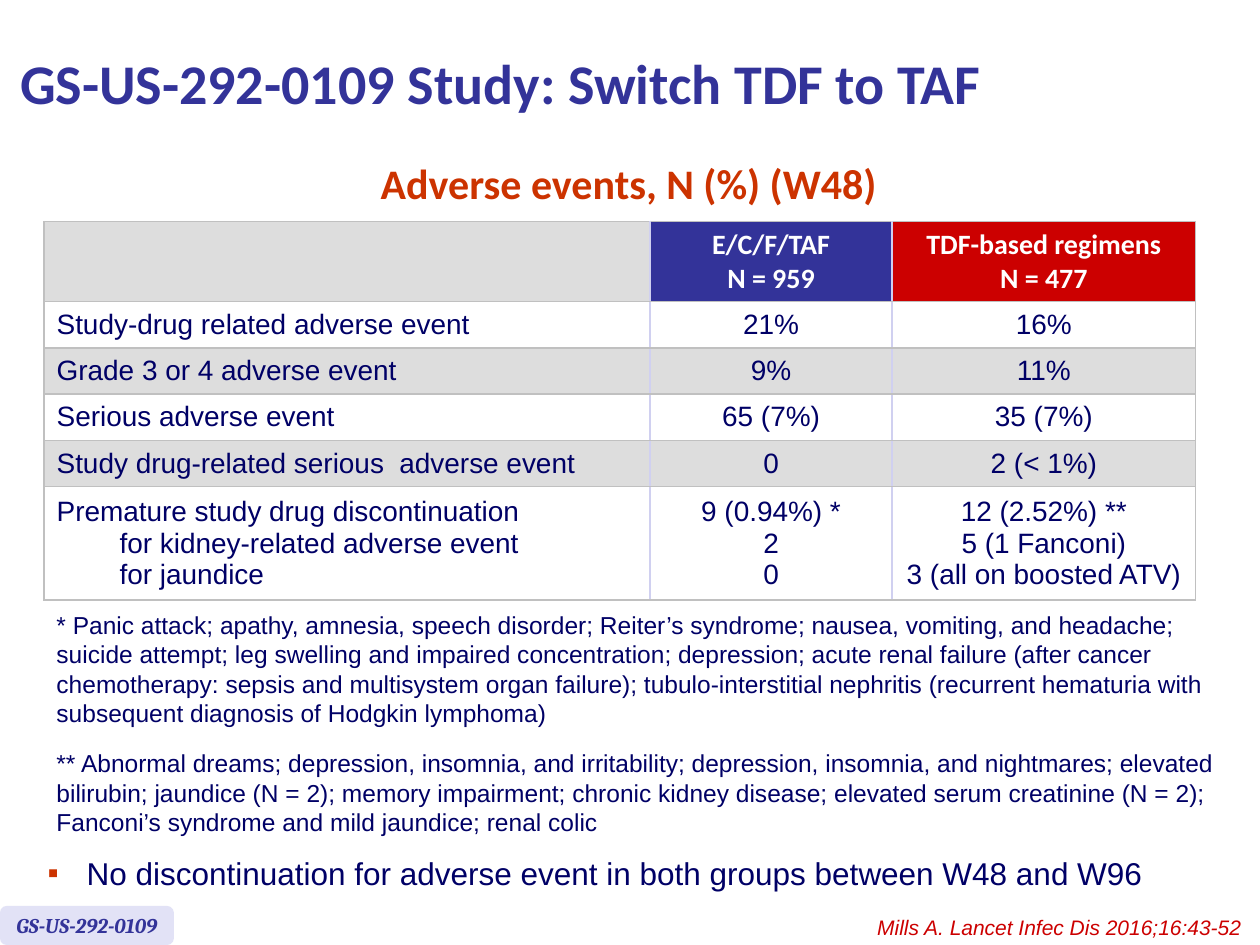
from typing import NamedTuple, Optional

from lxml import etree
from pptx import Presentation
from pptx.dml.color import RGBColor
from pptx.enum import shapes, text
from pptx.oxml.ns import qn
from pptx.util import Emu, Inches, Pt

NAVY = RGBColor(0x00, 0x00, 0x66)
BLUE = RGBColor(0x33, 0x33, 0x99)
PALE = RGBColor(0xE2, 0xE2, 0xF6)
RED = RGBColor(0xCC, 0x00, 0x00)
RUST = RGBColor(0xCC, 0x33, 0x00)
GREY = RGBColor(0xDD, 0xDD, 0xDD)
WHITE = RGBColor(0xFF, 0xFF, 0xFF)
EDGE = RGBColor(0xC0, 0xC0, 0xC0)
RULE = RGBColor(0xD0, 0xD0, 0xF0)

LEFT, MID, RIGHT = text.PP_ALIGN.LEFT, text.PP_ALIGN.CENTER, text.PP_ALIGN.RIGHT
WIDE, HIGH = Inches(10), Inches(7.5)
COLS, ROWS = 100, 75  # the slide's grid


class Box(NamedTuple):
    """A place on the grid: left, top, width, height."""
    x: float
    y: float
    w: float
    h: float


class Font(NamedTuple):
    name: str
    size: int
    tint: RGBColor
    bold: bool = False
    slant: bool = False


class Row(NamedTuple):
    h: float
    cells: tuple[str, str, str]
    fill: RGBColor


HEAD = Font("Calibri", 16, WHITE, bold=True)
BODY = Font("Arial", 16, NAVY)
NOTE = Font("Arial", 14, NAVY)

WIDTHS = (48.1, 19.2, 24.1)
HEADS = (GREY, BLUE, RED)
TABLE = (
    Row(6.35, ("", "E/C/F/TAF\nN = 959", "TDF-based regimens\nN = 477"), GREY),
    Row(3.66, ("Study-drug related adverse event", "21%", "16%"), WHITE),
    Row(3.66, ("Grade 3 or 4 adverse event", "9%", "11%"), GREY),
    Row(3.66, ("Serious adverse event", "65 (7%)", "35 (7%)"), WHITE),
    Row(3.66, ("Study drug-related serious  adverse event", "0", "2 (< 1%)"), GREY),
    Row(8.95, ("Premature study drug discontinuation\n"
               "for kidney-related adverse event\nfor jaundice",
               "9 (0.94%) *\n2\n0",
               "12 (2.52%) **\n5 (1 Fanconi)\n3 (all on boosted ATV)"), WHITE),
)
NOTES = (
    "* Panic attack; apathy, amnesia, speech disorder; Reiter’s syndrome; nausea, "
    "vomiting, and headache; suicide attempt; leg swelling and impaired concentration; "
    "depression; acute renal failure (after cancer chemotherapy: sepsis and multisystem "
    "organ failure); tubulo-interstitial nephritis (recurrent hematuria with subsequent "
    "diagnosis of Hodgkin lymphoma)\n"
    "** Abnormal dreams; depression, insomnia, and irritability; depression, insomnia, "
    "and nightmares; elevated bilirubin; jaundice (N = 2); memory impairment; chronic "
    "kidney disease; elevated serum creatinine (N = 2); Fanconi’s syndrome and mild "
    "jaundice; renal colic"
)


def across(n: float) -> Emu:
    return Emu(round(WIDE * n / COLS))


def down(n: float) -> Emu:
    return Emu(round(HIGH * n / ROWS))


def place(box: Box) -> tuple[Emu, Emu, Emu, Emu]:
    return across(box.x), down(box.y), across(box.w), down(box.h)


def indent(para, left: float, first: float = 0) -> None:
    props = para._p.get_or_add_pPr()
    props.set("marL", str(across(left)))
    props.set("indent", str(across(first)))


def write(frame, words: str, font: Font, align=LEFT, gap: float = 0) -> None:
    """Put each line of words in its own paragraph, gap points apart."""
    for i, line in enumerate(words.split("\n")):
        para = frame.paragraphs[0] if i == 0 else frame.add_paragraph()
        para.alignment = align
        if i and gap:
            para.space_before = Pt(gap)
        if not line:
            continue
        run = para.add_run()
        run.text = line
        run.font.name, run.font.size = font.name, Pt(font.size)
        run.font.bold, run.font.italic = font.bold, font.slant
        run.font.color.rgb = font.tint


def label(slide, box: Box, words: str, font: Font, align=LEFT,
          gap: float = 0, wrap: bool = True):
    frame = slide.shapes.add_textbox(*place(box)).text_frame
    frame.word_wrap = wrap
    write(frame, words, font, align, gap)
    return frame


def bullet(para, mark: str, tint: RGBColor) -> None:
    indent(para, 3.1, -3.1)
    props = para._p.get_or_add_pPr()
    hue = etree.SubElement(props, qn("a:buClr"))
    etree.SubElement(hue, qn("a:srgbClr"), val=str(tint))
    etree.SubElement(props, qn("a:buFont"), typeface="Arial")
    etree.SubElement(props, qn("a:buChar"), char=mark)


def border(cell, first: bool, last: bool) -> None:
    """Grey outer edges and row rules, pale rules between columns."""
    props = cell._tc.get_or_add_tcPr()
    tints = {"a:lnL": EDGE if first else RULE, "a:lnR": EDGE if last else RULE,
             "a:lnT": EDGE, "a:lnB": EDGE}
    for i, (tag, tint) in enumerate(tints.items()):
        line = etree.Element(qn(tag), w=str(Pt(1)))
        fill = etree.SubElement(line, qn("a:solidFill"))
        etree.SubElement(fill, qn("a:srgbClr"), val=str(tint))
        props.insert(i, line)


def grid(slide, x: float, y: float, rows: tuple[Row, ...]) -> None:
    box = Box(x, y, sum(WIDTHS), sum(row.h for row in rows))
    table = slide.shapes.add_table(len(rows), len(WIDTHS), *place(box)).table
    table.horz_banding = table.first_row = False
    for c, width in enumerate(WIDTHS):
        table.columns[c].width = across(width)
    for r, row in enumerate(rows):
        table.rows[r].height = down(row.h)
        for c, words in enumerate(row.cells):
            cell = table.cell(r, c)
            cell.vertical_anchor = text.MSO_ANCHOR.MIDDLE
            cell.fill.solid()
            cell.fill.fore_color.rgb = row.fill if r else HEADS[c]
            border(cell, c == 0, c == len(WIDTHS) - 1)
            write(cell.text_frame, words, BODY if r else HEAD, MID if c else LEFT)
            if c == 0:
                for para in cell.text_frame.paragraphs[1:]:
                    para.level = 1
                    indent(para, 5)


def tag(slide, box: Box, words: str, font: Font) -> None:
    shape = slide.shapes.add_shape(shapes.MSO_SHAPE.ROUNDED_RECTANGLE, *place(box))
    shape.shadow.inherit = False
    shape.fill.solid()
    shape.fill.fore_color.rgb = PALE
    shape.line.fill.background()
    frame = shape.text_frame
    frame.word_wrap = False
    frame.vertical_anchor = text.MSO_ANCHOR.MIDDLE
    write(frame, words, font, MID)


def title(slide, box: Box, words: str, font: Font) -> None:
    shape = slide.shapes.title
    shape.left, shape.top, shape.width, shape.height = place(box)
    frame = shape.text_frame
    frame.auto_size = text.MSO_AUTO_SIZE.NONE
    frame.vertical_anchor = text.MSO_ANCHOR.MIDDLE
    write(frame, words, font)


def main() -> None:
    deck = Presentation()
    deck.slide_width, deck.slide_height = WIDE, HIGH
    slide = deck.slides.add_slide(deck.slide_layouts[5])
    title(slide, Box(0.6, 0.5, 89.6, 12.1), "GS-US-292-0109 Study: Switch TDF to TAF",
          Font("Calibri", 32, BLUE, bold=True))
    label(slide, Box(29, 12, 41.8, 5), "Adverse events, N (%) (W48)",
          Font("Calibri", 24, RUST, bold=True), MID, wrap=False)
    grid(slide, 3.5, 17.6, TABLE)
    label(slide, Box(3.5, 47.9, 96, 19.9), NOTES, NOTE, gap=12)
    point = label(slide, Box(2.8, 67.3, 89.7, 4),
                  "No discontinuation for adverse event in both groups between W48 and W96",
                  Font("Arial", 18, NAVY))
    bullet(point.paragraphs[0], "▪", RUST)
    tag(slide, Box(0, 71.9, 13.8, 3.1), "GS-US-292-0109",
        Font("Cambria", 12, BLUE, bold=True, slant=True))
    label(slide, Box(53.6, 72.1, 46.4, 3), "Mills A. Lancet Infec Dis 2016;16:43-52 ",
          Font("Arial", 12, RED, slant=True), RIGHT)
    deck.save("out.pptx")


if __name__ == "__main__":
    main()
